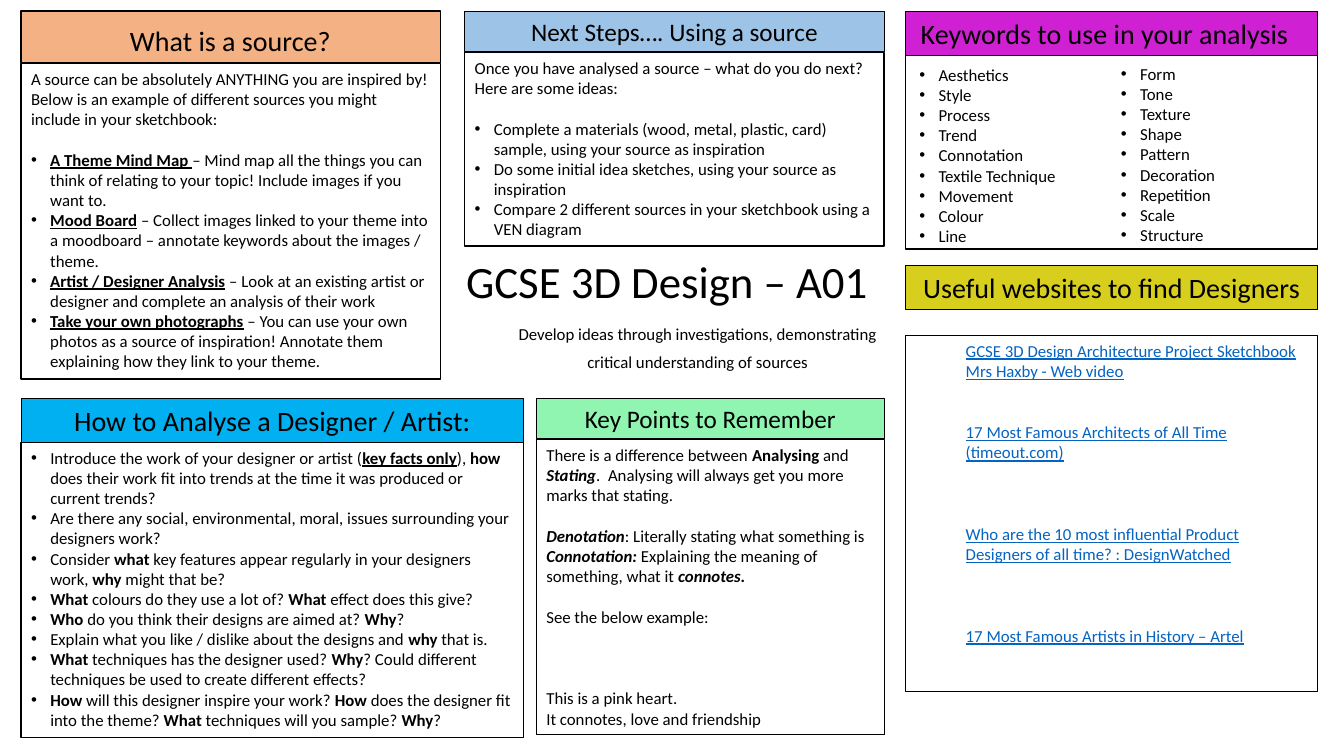
from lxml import etree
from pptx import Presentation
from pptx.dml.color import RGBColor
from pptx.enum.shapes import MSO_SHAPE
from pptx.enum.text import MSO_ANCHOR, PP_ALIGN
from pptx.oxml.ns import qn
from pptx.util import Inches, Pt

RECTANGLE = MSO_SHAPE.RECTANGLE
TOP = MSO_ANCHOR.TOP
LEFT, CENTER = PP_ALIGN.LEFT, PP_ALIGN.CENTER
FONT, BLACK, WHITE, LINK = "Calibri", "000000", "FFFFFF", "0563C1"
BODY_LINE = 14.65  # height in points of one 12 pt line

# Grid: (left, width) of each column, in inches
COL_LEFT, COL_MIDDLE, COL_RIGHT = (0.21, 4.16), (4.61, 4.16), (8.98, 4.09)
COL_ANALYSE, COL_POINTS = (0.21, 4.98), (5.32, 3.45)
ROW_TOP, ROW_LOWER = 0.11, 3.95


def color(value):
    return RGBColor.from_string(value)


def item(text, bullet=False, gap=0):
    """One paragraph; gap counts the empty lines above it."""
    return {"text": text, "bullet": bullet, "gap": gap}


def bullets(texts, first_gap=0):
    return [item(text, True, 0 if index else first_gap)
            for index, text in enumerate(texts)]


def add_spans(para, text, size, ink, underline):
    """Pieces between bars are bold; u: underlines them, i: slants them."""
    for index, piece in enumerate(text.split("|")):
        if not piece:
            continue
        strong = index % 2 == 1
        mark = piece[:2] if strong and piece[:2] in ("u:", "i:") else ""
        span = para.add_run()
        span.text = piece[len(mark):]
        font = span.font
        font.name, font.size, font.color.rgb = FONT, Pt(size), color(ink)
        font.bold = strong
        font.italic = mark == "i:"
        font.underline = underline or mark == "u:"


def set_indent(para, left, bullet):
    props = para._p.get_or_add_pPr()
    props.set("marL", str(Inches(left)))
    props.set("indent", str(Inches(-left if bullet else 0)))
    if bullet:
        etree.SubElement(props, qn("a:buFont")).set("typeface", "Arial")
        etree.SubElement(props, qn("a:buChar")).set("char", "•")


def write(box, items, size=12, ink=BLACK, align=LEFT, indent=0,
          underline=False, line_height=None, margins=(0.05, 0.1)):
    """Fill a box with paragraphs; margins are (top, right)."""
    frame = box.text_frame
    frame.word_wrap = True
    frame.vertical_anchor = TOP
    frame.margin_top, frame.margin_right = map(Inches, margins)
    for index, entry in enumerate(items):
        para = frame.add_paragraph() if index else frame.paragraphs[0]
        para.alignment = align
        if line_height:
            para.line_spacing = Pt(line_height)
        if entry["gap"]:
            para.space_before = Pt(BODY_LINE * entry["gap"])
        if entry["bullet"] or indent:
            set_indent(para, indent or 0.19, entry["bullet"])
        add_spans(para, entry["text"], size, ink, underline)


def add_panel(page, column, top, height, fill=WHITE, weight=1):
    left, width = column
    box = page.shapes.add_shape(RECTANGLE, Inches(left), Inches(top),
                                Inches(width), Inches(height))
    box.shadow.inherit = False
    box.fill.solid()
    box.fill.fore_color.rgb = color(fill)
    box.line.color.rgb = color(BLACK)
    box.line.width = Pt(weight)
    return box


def add_heading(page, column, top, height, fill, text, size=20, right=0.1):
    box = add_panel(page, column, top, height, fill, 0.75)
    write(box, [item(text)], size, align=CENTER, margins=(0.05, right))


def add_label(page, column, top, height, items, **style):
    left, width = column
    box = page.shapes.add_textbox(Inches(left), Inches(top),
                                  Inches(width), Inches(height))
    write(box, items, **style)


SOURCE = [item("A source can be absolutely ANYTHING you are inspired by! Below is an "
               "example of different sources you might include in your sketchbook:")]
SOURCE += bullets([
    "|u:A Theme Mind Map |– Mind map all the things you can think of relating to your "
    "topic! Include images if you want to.",
    "|u:Mood Board| – Collect images linked to your theme into a moodboard – annotate "
    "keywords about the images / theme.",
    "|u:Artist / Designer Analysis| – Look at an existing artist or designer and "
    "complete an analysis of their work",
    "|u:Take your own photographs| – You can use your own photos as a source of "
    "inspiration! Annotate them explaining how they link to your theme.",
], first_gap=1)

NEXT_STEPS = [item("Once you have analysed a source – what do you do next?"),
              item("Here are some ideas:")]
NEXT_STEPS += bullets([
    "Complete a materials (wood, metal, plastic, card) sample, using your source as "
    "inspiration",
    "Do some initial idea sketches, using your source as inspiration",
    "Compare 2 different sources in your sketchbook using a VEN diagram",
], first_gap=1)

ANALYSE = bullets([
    "Introduce the work of your designer or artist (|u:key facts only|), |how| does "
    "their work fit into trends at the time it was produced or current trends?",
    "Are there any social, environmental, moral, issues surrounding your designers work?",
    "Consider |what| key features appear regularly in your designers work, |why| might "
    "that be?",
    "|What| colours do they use a lot of? |What |effect does this give?",
    "|Who| do you think their designs are aimed at? |Why|?",
    "Explain what you like / dislike about the designs and |why| that is.",
    "|What| techniques has the designer used? |Why|? Could different techniques be used "
    "to create different effects?",
    "|How| will this designer inspire your work? |How |does the designer fit into the "
    "theme? |What| techniques will you sample? |Why|?",
])

KEY_POINTS = [
    item("There is a difference between |Analysing| and |i:Stating|.  Analysing will "
         "always get you more marks that stating."),
    item("|i:Denotation|: Literally stating what something is", gap=1),
    item("|i:Connotation: |Explaining the meaning of something, what it |i:connotes.|"),
    item("See the below example:", gap=1),
    item("This is a pink heart.", gap=3),
    item("It connotes, love and friendship"),
]

WEBSITES = [
    item("GCSE 3D Design Architecture Project Sketchbook Mrs Haxby - Web video"),
    item("17 Most Famous Architects of All Time (timeout.com)", gap=2),
    item("Who are the 10 most influential Product Designers of all time? : DesignWatched",
         gap=3),
    item("17 Most Famous Artists in History – Artel", gap=3),
]

KEYWORDS = [
    (9.02, 0.59, ["Aesthetics", "Style", "Process", "Trend", "Connotation",
                  "Textile Technique", "Movement", "Colour", "Line"]),
    (11.02, 0.58, ["Form", "Tone", "Texture", "Shape", "Pattern", "Decoration",
                   "Repetition", "Scale", "Structure"]),
]


def main():
    deck = Presentation()
    deck.slide_width, deck.slide_height = Inches(13.33), Inches(7.5)
    page = deck.slides.add_slide(deck.slide_layouts[6])

    # What is a source?
    write(add_panel(page, COL_LEFT, 0.63, 3.13), SOURCE)
    add_panel(page, COL_LEFT, ROW_TOP, 0.51, "F4B183")
    add_label(page, (1.18, 2.21), 0.18, 0.44, [item("What is a source?")],
              size=20, align=CENTER)

    # Next steps
    add_heading(page, COL_MIDDLE, ROW_TOP, 0.4, "9DC3E6",
                "Next Steps…. Using a source", 18)
    write(add_panel(page, COL_MIDDLE, 0.52, 1.92), NEXT_STEPS)

    # Keywords in two lists
    add_heading(page, COL_RIGHT, ROW_TOP, 0.44, "D020D4",
                "Keywords to use in your analysis", right=0.24)
    add_panel(page, COL_RIGHT, 0.55, 1.92)
    for left, top, words in KEYWORDS:
        add_label(page, (left, 2.04), top, 1.92, bullets(words))

    # Slide title and subtitle
    add_label(page, (4.39, 4.45), 2.47, 0.64, [item("GCSE 3D Design – A01")],
              size=32, align=CENTER)
    add_label(page, (5, 3.84), 3.13, 0.61,
              [item("Develop ideas through investigations, demonstrating critical "
                    "understanding of sources")],
              align=CENTER, line_height=20, margins=(0, 0.1))

    # Useful websites
    add_heading(page, COL_RIGHT, 2.63, 0.44, "D7CE1D", "Useful websites to find Designers")
    write(add_panel(page, COL_RIGHT, 3.33, 3.53), WEBSITES, ink=LINK, indent=0.5,
          underline=True)

    # How to analyse
    add_heading(page, COL_ANALYSE, ROW_LOWER, 0.44, "00B0F0",
                "How to Analyse a Designer / Artist:")
    write(add_panel(page, COL_ANALYSE, 4.39, 2.93), ANALYSE)

    # Key points
    add_heading(page, COL_POINTS, ROW_LOWER, 0.4, "8FF5B1", "Key Points to Remember", 18)
    write(add_panel(page, COL_POINTS, 4.36, 2.93), KEY_POINTS)

    deck.save("out.pptx")


if __name__ == "__main__":
    main()
